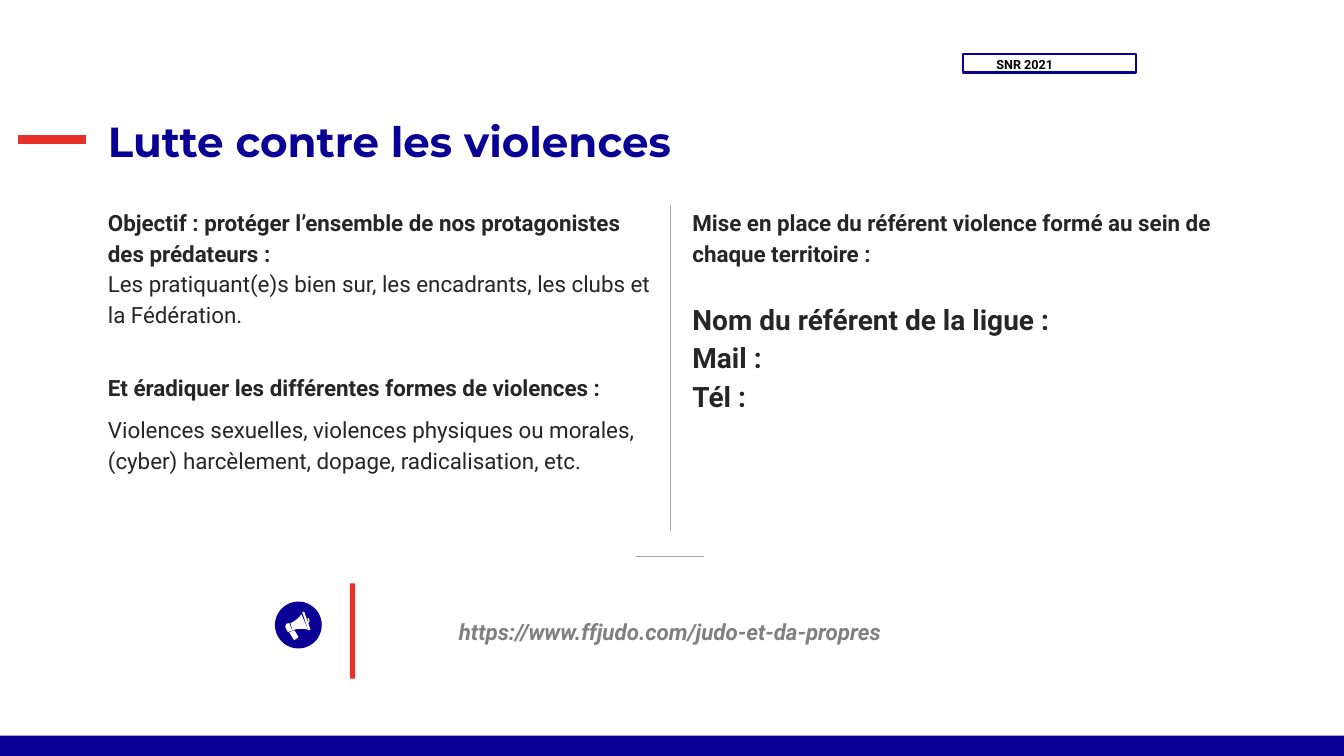
from lxml.etree import SubElement
from pptx import Presentation
from pptx.dml.color import RGBColor
from pptx.enum.shapes import MSO_CONNECTOR, MSO_SHAPE
from pptx.enum.text import MSO_ANCHOR, PP_ALIGN
from pptx.oxml.ns import qn
from pptx.util import Cm, Pt

BLUE, TITLE_BLUE, RED, LINK_RED = "0A0096", "090095", "E7302A", "E6332A"
GREY, DARK, WHITE = "A5A5A5", "262626", "FFFFFF"


def color(hex_string):
    return RGBColor.from_string(hex_string)


def write(shape, paragraphs, font_name="Roboto", line_spacing=1.15,
          align=PP_ALIGN.LEFT, anchor=MSO_ANCHOR.TOP):
    """Fill a shape with (text, size, bold, italic, colour, space before) rows."""
    frame = shape.text_frame
    frame.word_wrap = True
    frame.vertical_anchor = anchor
    frame.margin_left = frame.margin_right = frame.margin_top = frame.margin_bottom = 0
    for index, (text, size, bold, italic, ink, before) in enumerate(paragraphs):
        paragraph = frame.add_paragraph() if index else frame.paragraphs[0]
        paragraph.alignment = align
        paragraph.line_spacing = line_spacing
        paragraph.space_before = Pt(before)
        run = paragraph.add_run()
        run.text = text
        run.font.name = font_name
        run.font.size = Pt(size)
        run.font.bold = bold
        run.font.italic = italic
        run.font.color.rgb = color(ink)


presentation = Presentation()
presentation.slide_width = Cm(33.87)
presentation.slide_height = Cm(19.05)
slide = presentation.slides.add_slide(presentation.slide_layouts[6])
shapes = slide.shapes

# Footer band and the red bar beside the link
for left, top, width, height, fill in [
    (-0.2, 18.54, 34.19, 0.74, BLUE),
    (8.82, 14.7, 0.13, 2.4, LINK_RED),
]:
    bar = shapes.add_shape(MSO_SHAPE.RECTANGLE, Cm(left), Cm(top), Cm(width), Cm(height))
    bar.shadow.inherit = False
    bar.fill.solid()
    bar.fill.fore_color.rgb = color(fill)
    bar.line.fill.background()

# Season badge
badge = shapes.add_shape(MSO_SHAPE.RECTANGLE, Cm(24.26), Cm(1.37), Cm(4.37), Cm(0.46))
badge.shadow.inherit = False
badge.fill.background()
badge.line.color.rgb = color(BLUE)
badge.line.width = Pt(1.5)
write(badge, [("SNR 2021", 9, True, False, "000000", 0)])
badge.text_frame.margin_left = Cm(0.85)

# Title dash, column divider and short rule
for x1, y1, x2, y2, ink, weight in [
    (0.46, 3.51, 2.16, 3.51, RED, 6),
    (16.89, 5.16, 16.89, 13.39, GREY, 0.25),
    (16.03, 14.02, 17.73, 14.02, GREY, 0.25),
]:
    rule = shapes.add_connector(MSO_CONNECTOR.STRAIGHT, Cm(x1), Cm(y1), Cm(x2), Cm(y2))
    rule.line.color.rgb = color(ink)
    rule.line.width = Pt(weight)
    SubElement(rule._element.spPr, qn("a:effectLst"))

title = shapes.add_textbox(Cm(2.72), Cm(2.72), Cm(27.53), Cm(1.47))
write(title, [("Lutte contre les violences", 30, True, False, TITLE_BLUE, 0)],
      font_name="Montserrat", line_spacing=0.9, anchor=MSO_ANCHOR.BOTTOM)

link = shapes.add_textbox(Cm(9.47), Cm(15.47), Cm(14.83), Cm(1.63))
write(link, [("https://www.ffjudo.com/judo-et-da-propres", 16, True, True, "808080", 0)],
      align=PP_ALIGN.CENTER)

goals = [
    ("Objectif : protéger l’ensemble de nos protagonistes des prédateurs :",
     16, True, False, DARK, 0),
    ("Les pratiquant(e)s bien sur, les encadrants, les clubs et la Fédération.",
     16, False, False, DARK, 0),
    ("Et éradiquer les différentes formes de violences :", 16, True, False, DARK, 30),
    ("Violences sexuelles, violences physiques ou morales, (cyber) harcèlement, "
     "dopage, radicalisation, etc.", 16, False, False, DARK, 8),
]
contact = [
    ("Mise en place du référent violence formé au sein de chaque territoire :",
     16, True, False, DARK, 0),
    ("Nom du référent de la ligue :", 20, True, False, DARK, 22),
    ("Mail :", 20, True, False, DARK, 0),
    ("Tél :", 20, True, False, DARK, 0),
]
for left, paragraphs in [(2.72, goals), (17.45, contact)]:
    column = shapes.add_textbox(Cm(left), Cm(5.16), Cm(13.67), Cm(8.23))
    write(column, paragraphs)

# Megaphone icon: outlines in hundredths of a centimetre
handle = [(729, 1593), (739, 1610), (742, 1613), (749, 1608), (752, 1605),
          (742, 1588), (737, 1590)]
knob = [(775, 1557), (777, 1570), (780, 1567), (780, 1562), (777, 1557)]
back = [(729, 1570), (721, 1572), (719, 1580), (724, 1590), (726, 1593),
        (732, 1590), (737, 1590)]
horn = [(759, 1547), (757, 1552), (749, 1560), (739, 1567), (732, 1570),
        (737, 1588), (749, 1585), (772, 1585), (777, 1588)]
rim = [(765, 1542), (762, 1542), (762, 1544), (777, 1588), (782, 1588),
       (782, 1585), (767, 1542)]

icon = shapes.add_group_shape()
disc = icon.shapes.add_shape(MSO_SHAPE.OVAL, Cm(6.93), Cm(15.16), Cm(1.18), Cm(1.18))
icon_parts = [(disc, BLUE)]
for outline in (handle, knob, back, horn, rim):
    builder = icon.shapes.build_freeform(*outline[0], scale=Cm(0.01))
    builder.add_line_segments(outline[1:], close=True)
    icon_parts.append((builder.convert_to_shape(), WHITE))
for part, fill in icon_parts:
    part.shadow.inherit = False
    part.fill.solid()
    part.fill.fore_color.rgb = color(fill)
    part.line.fill.background()

presentation.save("out.pptx")
